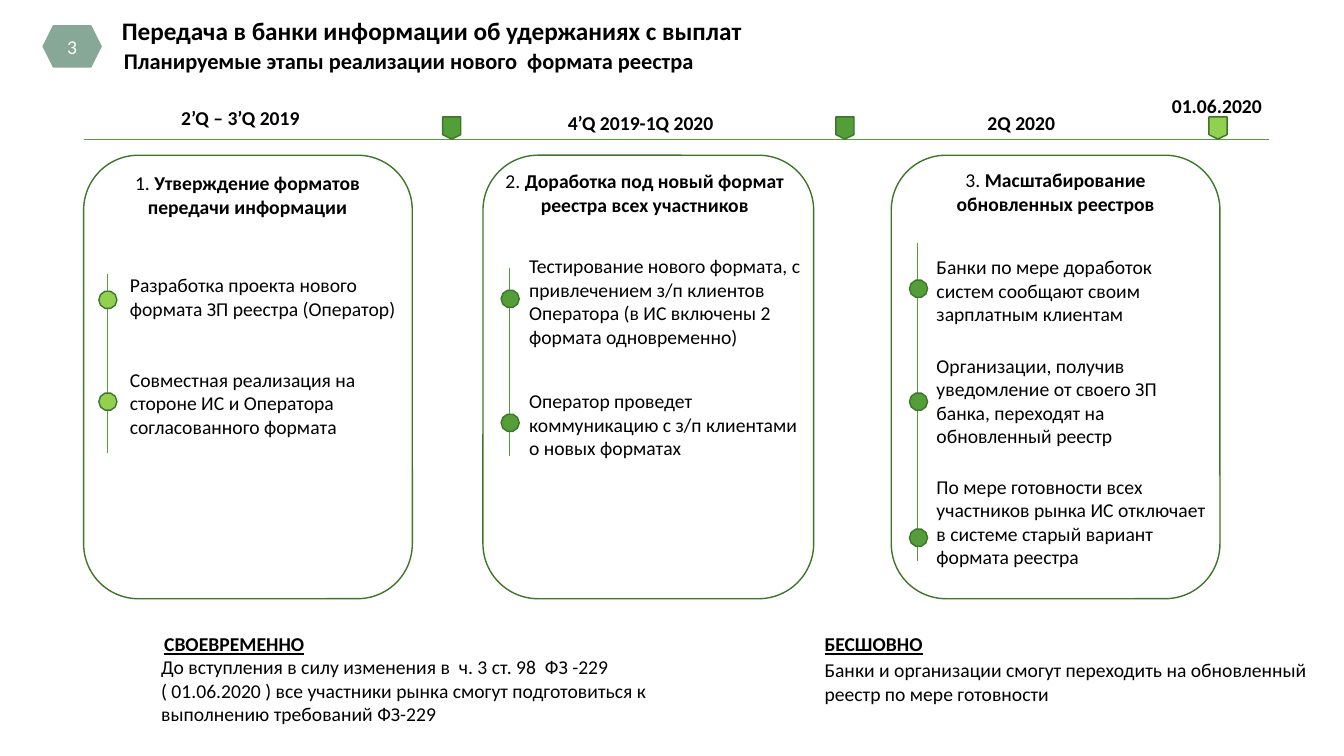
"""Builds the slide on the planned stages of the new payroll register format."""
import pptx
import pptx.util
import pptx.dml.color
import pptx.enum.shapes
import pptx.enum.text
import pptx.oxml

Inches = pptx.util.Inches
SHAPE = pptx.enum.shapes.MSO_SHAPE
ALIGN = pptx.enum.text.PP_ALIGN

THEME = {
    "font": "Calibri", "title": 18, "subtitle": 16, "body": 14,
    "text": "000000", "white": "FFFFFF", "badge": "87A896",
    "outline": "3E752A", "green": "549E39", "lime": "92D050",
    "outline_width": 1, "rule_width": 0.5,
}
PAGE_NUMBER = "3"
TITLE = "Передача в банки информации об удержаниях с выплат"
SUBTITLE = "Планируемые этапы реализации нового  формата реестра"

PERIODS = [
    ("2’Q – 3’Q 2019", 0.92, 1.0, 2.93),
    ("4’Q 2019-1Q 2020", 4.89, 1.05, 2.93),
    ("2Q 2020", 9.1, 1.05, 2.06),
    ("01.06.2020", 11.44, 0.88, 1.26),
]
MILESTONES = [(4.39, "green"), (8.29, "green"), (11.99, "lime")]

STAGES = [
    {"heading": ("1. ", "Утверждение форматов передачи информации"),
     "heading_box": (0.99, 1.65, 2.93), "card": (0.83, 3.26),
     "spine": (1.06, 2.72, 4.49), "text_left": 1.19, "dot": "lime",
     "steps": [
         ("Разработка проекта нового формата ЗП реестра (Оператор)", 2.66, 2, 2.89),
         ("Совместная реализация на стороне ИС и Оператора согласованного формата", 3.6, 3, 3.9)]},
    {"heading": ("2. ", "Доработка под новый формат реестра всех участников"),
     "heading_box": (4.89, 1.63, 3.01), "card": (4.79, 3.28),
     "spine": (5.05, 2.66, 4.52), "text_left": 5.15, "dot": "green",
     "steps": [
         ("Тестирование нового формата, с привлечением з/п клиентов Оператора "
          "(в ИС включены 2 формата одновременно)", 2.47, 4, 2.88),
         ("Оператор проведет коммуникацию с з/п клиентами о новых форматах", 3.81, 3, 4.11)]},
    {"heading": ("3. ", "Масштабирование обновленных реестров"),
     "heading_box": (8.92, 1.62, 3.1), "card": (8.84, 3.26),
     "spine": (9.1, 2.41, 5.57), "text_left": 9.19, "dot": "green",
     "steps": [
         ("Банки по мере доработок систем сообщают своим зарплатным клиентам", 2.48, 3, 2.78),
         ("Организации, получив уведомление от своего ЗП банка, переходят на "
          "обновленный реестр", 3.46, 4, 3.9),
         ("По мере готовности всех участников рынка ИС отключает в системе старый "
          "вариант формата реестра", 4.66, 4, 5.25)]},
]

BENEFITS = [
    ("СВОЕВРЕМЕННО", (1.53, 6.22, 1.7),
     ["До вступления в силу изменения в  ч. 3 ст. 98  ФЗ -229",
      "( 01.06.2020 ) все участники рынка смогут подготовиться к выполнению "
      "требований ФЗ-229"], (1.5, 6.45, 5.13), 3),
    ("БЕСШОВНО", (8.08, 6.22, 1.3),
     ["Банки и организации смогут переходить на обновленный реестр по мере готовности"],
     (8.08, 6.48, 5.06), 2),
]

CARD_TOP, CARD_HEIGHT = 1.54, 4.4
TIMELINE_LEFT, TIMELINE_RIGHT, TIMELINE_Y = 0.83, 12.59, 1.38
MARK_WIDTH, MARK_HEIGHT = 0.18, 0.22
DOT_WIDTH, DOT_HEIGHT = 0.18, 0.17
STEP_WIDTH = 2.93


def color(name):
    return pptx.dml.color.RGBColor.from_string(THEME[name])


def text_height(lines, size):
    return 0.1 + lines * size * 1.22 / 72


def style(paragraph, size="body", bold=None, underline=None, ink="text", align=ALIGN.LEFT):
    font = paragraph.font
    font.name = THEME["font"]
    font.size = pptx.util.Pt(THEME[size])
    font.bold = bold
    font.underline = underline
    font.color.rgb = color(ink)
    paragraph.alignment = align


def add_text(slide, paragraphs, place, lines=1, size="body", wrap=True, **look):
    left, top, width = place
    height = text_height(lines, THEME[size])
    frame = slide.shapes.add_textbox(
        Inches(left), Inches(top), Inches(width), Inches(height)).text_frame
    frame.word_wrap = wrap
    for index, words in enumerate(paragraphs):
        paragraph = frame.add_paragraph() if index else frame.paragraphs[0]
        paragraph.text = words
        style(paragraph, size, **look)
    return frame


def add_figure(slide, preset, left, top, width, height, fill, outlined=True):
    figure = slide.shapes.add_shape(
        preset, Inches(left), Inches(top), Inches(width), Inches(height))
    figure.shadow.inherit = False
    figure.fill.solid()
    figure.fill.fore_color.rgb = color(fill)
    if outlined:
        figure.line.color.rgb = color("outline")
        figure.line.width = pptx.util.Pt(THEME["outline_width"])
    else:
        figure.line.fill.background()
    return figure


def add_rule(slide, x1, y1, x2, y2):
    rule = slide.shapes.add_connector(
        pptx.enum.shapes.MSO_CONNECTOR.STRAIGHT,
        Inches(x1), Inches(y1), Inches(x2), Inches(y2))
    rule.line.color.rgb = color("green")
    rule.line.width = pptx.util.Pt(THEME["rule_width"])
    rule._element.spPr.append(pptx.oxml.parse_xml(
        '<a:effectLst xmlns:a="http://schemas.openxmlformats.org/drawingml/2006/main"/>'))


def add_header(slide):
    badge = add_figure(slide, SHAPE.HEXAGON, 0.42, 0.25, 0.59, 0.42, "badge", outlined=False)
    frame = badge.text_frame
    frame.margin_left = frame.margin_right = Inches(0.05)
    frame.vertical_anchor = pptx.enum.text.MSO_ANCHOR.MIDDLE
    frame.text = PAGE_NUMBER
    style(frame.paragraphs[0], ink="white", align=ALIGN.CENTER)
    add_text(slide, [SUBTITLE], (1.13, 0.42, 11.31), size="subtitle", bold=True)
    add_text(slide, [TITLE], (1.11, 0.1, 6.47), size="title", wrap=False, bold=True)


def add_timeline(slide):
    add_rule(slide, TIMELINE_LEFT, TIMELINE_Y, TIMELINE_RIGHT, TIMELINE_Y)
    for left, fill in MILESTONES:
        add_figure(slide, SHAPE.FLOWCHART_OFFPAGE_CONNECTOR, left,
                   TIMELINE_Y - MARK_HEIGHT, MARK_WIDTH, MARK_HEIGHT, fill)
    for period, *place in PERIODS:
        add_text(slide, [period], place, bold=True, align=ALIGN.CENTER)


def add_stage(slide, stage):
    card_left, card_width = stage["card"]
    add_figure(slide, SHAPE.ROUNDED_RECTANGLE, card_left, CARD_TOP,
               card_width, CARD_HEIGHT, "white")
    number, name = stage["heading"]
    heading = add_text(slide, [number], stage["heading_box"], 2, align=ALIGN.CENTER)
    name_run = heading.paragraphs[0].add_run()
    name_run.text = name
    name_run.font.bold = True
    spine_x, spine_top, spine_bottom = stage["spine"]
    add_rule(slide, spine_x, spine_top, spine_x, spine_bottom)
    for step, top, lines, dot_top in stage["steps"]:
        add_figure(slide, SHAPE.DECAGON, spine_x - 0.08, dot_top,
                   DOT_WIDTH, DOT_HEIGHT, stage["dot"])
        add_text(slide, [step], (stage["text_left"], top, STEP_WIDTH), lines)


def main():
    deck = pptx.Presentation()
    deck.slide_width, deck.slide_height = Inches(13.33), Inches(7.5)
    slide = deck.slides.add_slide(deck.slide_layouts[6])
    add_header(slide)
    add_timeline(slide)
    for stage in STAGES:
        add_stage(slide, stage)
    for label, label_place, details, details_place, lines in BENEFITS:
        add_text(slide, [label], label_place, bold=True, underline=True)
        add_text(slide, details, details_place, lines)
    deck.save("out.pptx")


if __name__ == "__main__":
    main()
